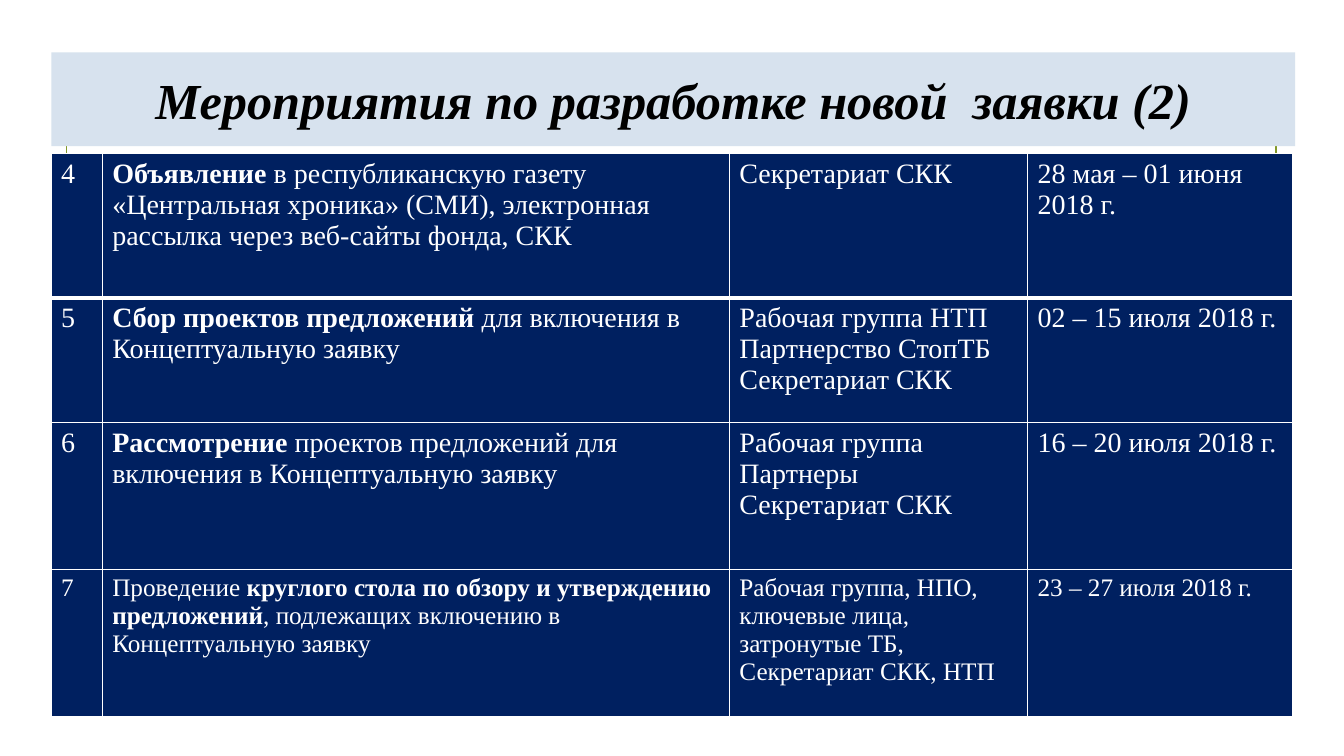
"""Build the slide with the table of steps for the new application."""
import pptx
import pptx.util
import pptx.dml.color
import pptx.enum.shapes
import pptx.enum.text
import pptx.oxml

Pt = pptx.util.Pt
RGB = pptx.dml.color.RGBColor.from_string
RECT = pptx.enum.shapes.MSO_SHAPE.RECTANGLE
FONT = "Times New Roman"
NS = "http://schemas.openxmlformats.org/drawingml/2006/main"
COLORS = {"navy": "002060", "white": "FFFFFF", "black": "000000",
          "pale": "D7E2EE", "olive": "83992A"}
COLS = [36.5, 448, 213, 189]
ROWS = [
    (103, 20, ["4",
               "*Объявление* в республиканскую газету «Центральная хроника» (СМИ), "
               "электронная рассылка через веб-сайты фонда, СКК",
               "Секретариат СКК",
               "28 мая – 01 июня 2018 г."]),
    (89, 20, ["5",
              "*Сбор проектов предложений *для включения в Концептуальную заявку",
              "Рабочая группа НТП\nПартнерство СтопТБ\nСекретариат СКК",
              "02 – 15 июля 2018 г."]),
    (105, 20, ["6",
               "*Рассмотрение* проектов предложений для включения в Концептуальную заявку",
               "Рабочая группа\nПартнеры\nСекретариат СКК",
               "16 – 20 июля 2018 г."]),
    (105, 18, ["7",
               "Проведение *круглого стола по обзору и утверждению предложений*, "
               "подлежащих включению в Концептуальную заявку",
               "Рабочая группа, НПО, ключевые лица, затронутые ТБ, Секретариат СКК, НТП",
               "23 – 27 июля 2018 г."]),
]


def style(font, size, color, bold):
    font.name = FONT
    font.size = Pt(size)
    font.bold = bold
    font.color.rgb = RGB(COLORS[color])


def border(cell, side, width):
    cell._tc.get_or_add_tcPr().append(pptx.oxml.parse_xml(
        f'<a:ln{side} xmlns:a="{NS}" w="{Pt(width)}"><a:solidFill>'
        f'<a:srgbClr val="{COLORS["white"]}"/></a:solidFill></a:ln{side}>'))


deck = pptx.Presentation()
deck.slide_width, deck.slide_height = Pt(960), Pt(540)
slide = deck.slides.add_slide(deck.slide_layouts[6])

frame = slide.shapes.add_shape(RECT, Pt(47.5), Pt(48), Pt(864), Pt(444))
frame.shadow.inherit = False
frame.fill.background()
frame.line.color.rgb = RGB(COLORS["olive"])
frame.line.width = Pt(1.25)

title = slide.shapes.add_shape(RECT, Pt(36.7), Pt(37.4), Pt(888.5), Pt(67))
title.shadow.inherit = False
title.fill.solid()
title.fill.fore_color.rgb = RGB(COLORS["pale"])
title.line.fill.background()
title.text_frame.word_wrap = True
title.text_frame.vertical_anchor = pptx.enum.text.MSO_ANCHOR.MIDDLE
title.text_frame.text = "Мероприятия по разработке новой  заявки (2)"
head = title.text_frame.paragraphs[0]
head.alignment = pptx.enum.text.PP_ALIGN.CENTER
style(head.runs[0].font, 36, "black", True)
head.runs[0].font.italic = True

table = slide.shapes.add_table(
    len(ROWS), len(COLS), Pt(36.5), Pt(109.7),
    Pt(sum(COLS)), Pt(sum(row[0] for row in ROWS))).table
table.first_row = False
table.horz_banding = False
for col, width in enumerate(COLS):
    table.columns[col].width = Pt(width)

for row, (height, size, texts) in enumerate(ROWS):
    table.rows[row].height = Pt(height)
    widths = {"L": 1, "R": 1, "T": 3 if row == 1 else 1, "B": 3 if row == 0 else 1}
    for col, text in enumerate(texts):
        cell = table.cell(row, col)
        for side, width in widths.items():
            border(cell, side, width)
        cell.fill.solid()
        cell.fill.fore_color.rgb = RGB(COLORS["navy"])
        for num, line in enumerate(text.split("\n")):
            para = cell.text_frame.add_paragraph() if num else cell.text_frame.paragraphs[0]
            for part, words in enumerate(line.split("*")):
                if words:
                    run = para.add_run()
                    run.text = words
                    style(run.font, size, "white", part % 2 == 1)

deck.save("out.pptx")
